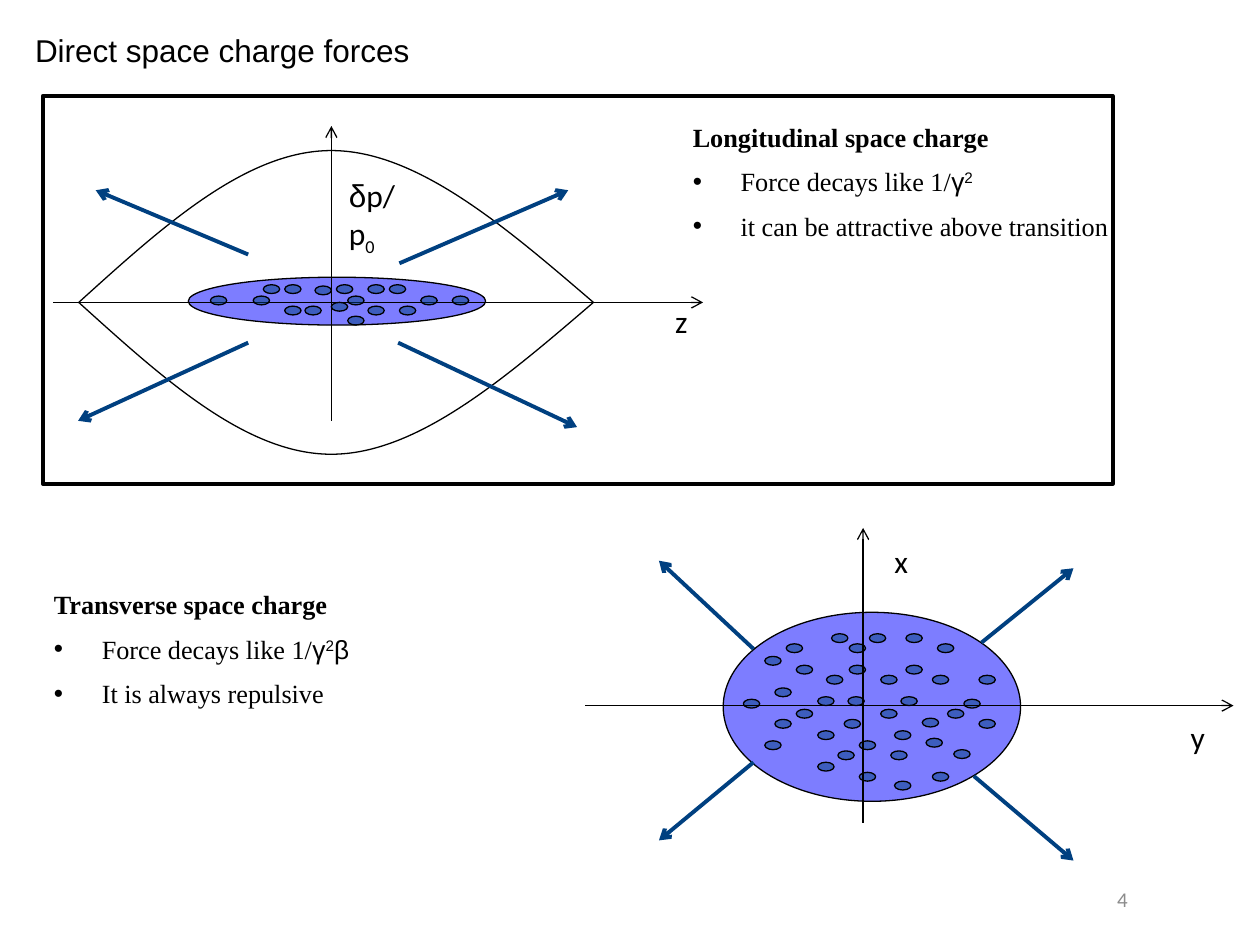
from lxml import etree
from pptx import Presentation
from pptx.dml.color import RGBColor
from pptx.enum.shapes import MSO_CONNECTOR, MSO_SHAPE
from pptx.enum.text import MSO_ANCHOR, MSO_AUTO_SIZE, PP_ALIGN
from pptx.oxml.ns import qn
from pptx.util import Inches, Pt

STRAIGHT = MSO_CONNECTOR.STRAIGHT
ELLIPSE = MSO_SHAPE.OVAL
RECTANGLE = MSO_SHAPE.RECTANGLE
MIDDLE = MSO_ANCHOR.MIDDLE
RIGHT = PP_ALIGN.RIGHT
GROW = MSO_AUTO_SIZE.SHAPE_TO_FIT_TEXT

COLORS = {"ink": "000000", "bunch": "0000FF", "force": "004080", "muted": "8C8C8C"}
SANS, LABEL, SERIF = "Arial", "Calibri", "Times New Roman"
CELL = 0.1  # inches; the slide is 100 columns by 75 rows
THIN, THICK = 0.75, 2.25
OPACITY = 51

# Left and top of every particle, in columns and rows
LONGITUDINAL_BACK = [(25, 22.7), (26.3, 24)]
LONGITUDINAL_FRONT = [
    (29.2, 22.6), (24.2, 24.3), (29.2, 24.3), (22.6, 22.6), (22.6, 24.3),
    (31.7, 24.3), (20.9, 22.6), (30.9, 22.6), (35.9, 23.5), (16.7, 23.5),
    (20.1, 23.5), (33.4, 23.5), (27.6, 23.5), (27.6, 25.1), (26.7, 22.6),
]
TRANSVERSE = [
    (65.6, 53.6), (67, 57.1), (69.9, 53.6), (64.9, 58), (69.9, 56.3),
    (63.2, 52.8), (61.5, 57.1), (75.2, 56.3), (61.5, 54.6), (71.9, 52.8),
    (76.5, 55.5), (59, 55.5), (74, 53.6), (60.7, 52.1), (68.2, 58.8),
    (67.4, 52.8), (71, 58), (70.7, 59.6), (73.5, 58.6), (74, 61.3),
    (75.7, 59.5), (66.5, 59.6), (68.2, 61.3), (71, 62), (60.7, 58.8),
    (64.9, 60.5), (63.2, 56.3), (64.9, 55.3), (67.3, 55.3), (71.5, 55.3),
    (73.2, 57), (67.4, 51.1), (69, 50.3), (74.4, 51.1), (71.9, 50.3),
    (77.7, 53.6), (77.7, 57.1), (62.4, 51.1), (66, 50.3),
]


def cells(*values):
    return [Inches(round(value * CELL, 3)) for value in values]


class Diagram:
    def __init__(self, slide):
        self.slide = slide

    def style(self, shape, width, fill=None):
        shape.shadow.inherit = False
        shape.line.color.rgb = RGBColor.from_string(COLORS["ink"])
        shape.line.width = Pt(width)
        if fill is None:
            shape.fill.background()
            return
        shape.fill.solid()
        shape.fill.fore_color.rgb = RGBColor.from_string(COLORS[fill])
        color = shape.fill._xPr.find(".//" + qn("a:srgbClr"))
        etree.SubElement(color, qn("a:alpha"), val=str(OPACITY * 1000))

    def frame(self, *box):
        self.style(self.slide.shapes.add_shape(RECTANGLE, *cells(*box)), THICK)

    def ellipse(self, box, fill):
        self.style(self.slide.shapes.add_shape(ELLIPSE, *cells(*box)), THIN, fill)

    def particles(self, places):
        for left, top in places:
            self.ellipse((left, top, 1.3, 0.7), "force")

    def arrow(self, tip, foot, color="ink", width=THIN):
        line = self.slide.shapes.add_connector(STRAIGHT, *cells(*tip, *foot))
        line.line.color.rgb = RGBColor.from_string(COLORS[color])
        line.line.width = Pt(width)
        etree.SubElement(line.line._get_or_add_ln(), qn("a:headEnd"), type="arrow")
        etree.SubElement(line._element.spPr, qn("a:effectLst"))

    def forces(self, arrows):
        for tip, foot in arrows:
            self.arrow(tip, foot, "force", THICK)

    def curve(self, start, *segments):
        """Cubic curve; each segment is two control points and an end."""
        builder = self.slide.shapes.build_freeform(*cells(*start))
        builder.add_line_segments([cells(*segment[-1]) for segment in segments], close=False)
        shape = builder.convert_to_shape()
        for line, segment in zip(list(shape._element.iter(qn("a:lnTo"))), segments):
            cubic = etree.Element(qn("a:cubicBezTo"))
            for x, y in (cells(*point) for point in segment):
                etree.SubElement(cubic, qn("a:pt"), x=str(x - shape.left), y=str(y - shape.top))
            line.getparent().replace(line, cubic)
        self.style(shape, THIN)

    def text_frame(self, box, wrap, grow=True):
        frame = self.slide.shapes.add_textbox(*cells(*box)).text_frame
        frame.word_wrap = wrap
        if grow:
            frame.auto_size = GROW
        return frame

    def run(self, paragraph, text, font, size, color="ink", bold=False, baseline=0):
        run = paragraph.add_run()
        run.text = text
        run.font.name = font
        run.font.size = Pt(size)
        run.font.bold = bold
        run.font.color.rgb = RGBColor.from_string(COLORS[color])
        if baseline:
            run._r.get_or_add_rPr().set("baseline", str(baseline * 1000))

    def label(self, box, *pieces, wrap=False):
        """One paragraph of 18 point text; a piece is (text, font[, baseline])."""
        paragraph = self.text_frame(box, wrap).paragraphs[0]
        for text, font, *baseline in pieces:
            self.run(paragraph, text, font, 18, baseline=sum(baseline))

    def notes(self, box, heading, *bullets):
        """A bold heading over bullets, each a list of (text, font[, baseline])."""
        frame = self.text_frame(box, True)
        for index, pieces in enumerate([[(heading, SERIF)], *bullets]):
            paragraph = frame.add_paragraph() if index else frame.paragraphs[0]
            properties = paragraph._p.get_or_add_pPr()
            spacing = etree.SubElement(properties, qn("a:spcBef"))
            etree.SubElement(spacing, qn("a:spcPct"), val="50000")
            if index:
                properties.set("marL", str(Inches(0.38)))
                properties.set("indent", str(-Inches(0.38)))
                etree.SubElement(properties, qn("a:buFont"), typeface=SANS)
                etree.SubElement(properties, qn("a:buChar"), char="•")
            for text, font, *baseline in pieces:
                self.run(paragraph, text, font, 15, bold=not index, baseline=sum(baseline))

    def page_number(self, box, number):
        frame = self.text_frame(box, True, grow=False)
        frame.vertical_anchor = MIDDLE
        frame.paragraphs[0].alignment = RIGHT
        self.run(frame.paragraphs[0], number, LABEL, 12, "muted")


def draw_longitudinal(diagram):
    diagram.ellipse((14.95, 22, 23.6, 3.8), "bunch")
    diagram.particles(LONGITUDINAL_BACK)
    axis = 24
    diagram.arrow((55.8, axis), (4.2, axis))
    diagram.arrow((26.3, 10), (26.3, 33.4))
    for side in (-1, 1):
        half, peak = axis + 6 * side, axis + 12.05 * side
        diagram.curve((6.25, axis),
                      ((12.9, half), (19.5, peak), (26.3, peak)),
                      ((33.1, peak), (40.1, half), (47.1, axis)))
    diagram.label((52.6, 23.5, 3.1, 4), ("z", LABEL))
    diagram.label((26.7, 13.5, 7.3, 4),
                  ("δ", SANS), ("p/p", LABEL), ("0", LABEL, -25), wrap=True)
    diagram.frame(3.4, 7.6, 84.9, 30.8)
    diagram.particles(LONGITUDINAL_FRONT)
    diagram.forces([((45.8, 33.9), (31.6, 27.2)), ((45.1, 15.1), (31.7, 20.9)),
                    ((6.2, 33.4), (19.7, 27.2)), ((7.6, 15.1), (19.7, 20.2))])
    diagram.notes((54, 9.1, 43.4, 11.1), "Longitudinal space charge",
                  [("Force decays like 1/", SERIF), ("γ", SANS), ("2", SANS, 30)],
                  [("it can be attractive above transition", SERIF)])


def draw_transverse(diagram):
    diagram.ellipse((57.4, 48.6, 23.6, 15), "bunch")
    diagram.particles(TRANSVERSE)
    diagram.forces([((85.2, 68.3), (77.3, 61.6)), ((52.3, 66.7), (59.8, 60.5)),
                    ((52.3, 44.5), (59.8, 51.5)), ((85.2, 45.1), (77.9, 51))])
    diagram.arrow((97.9, 56), (46.4, 56))
    diagram.arrow((68.5, 41.9), (68.5, 65.3))
    diagram.label((70, 42.5, 3.1, 4), ("x", LABEL))
    diagram.label((93.5, 56.5, 3.2, 4), ("y", LABEL))
    diagram.notes((3.3, 46.2, 43.4, 11.1), "Transverse space charge",
                  [("Force decays like 1/", SERIF), ("γ", SANS), ("2", SANS, 30), ("β", SANS)],
                  [("It is always repulsive", SERIF)])


def main():
    presentation = Presentation()
    presentation.slide_width, presentation.slide_height = cells(100, 75)
    diagram = Diagram(presentation.slides.add_slide(presentation.slide_layouts[6]))
    diagram.page_number((67.2, 69.4, 23.3, 4), "4")
    draw_longitudinal(diagram)
    draw_transverse(diagram)
    diagram.label((1.8, 2, 41.6, 4), ("Direct space charge forces", SANS))
    presentation.save("out.pptx")


if __name__ == "__main__":
    main()
